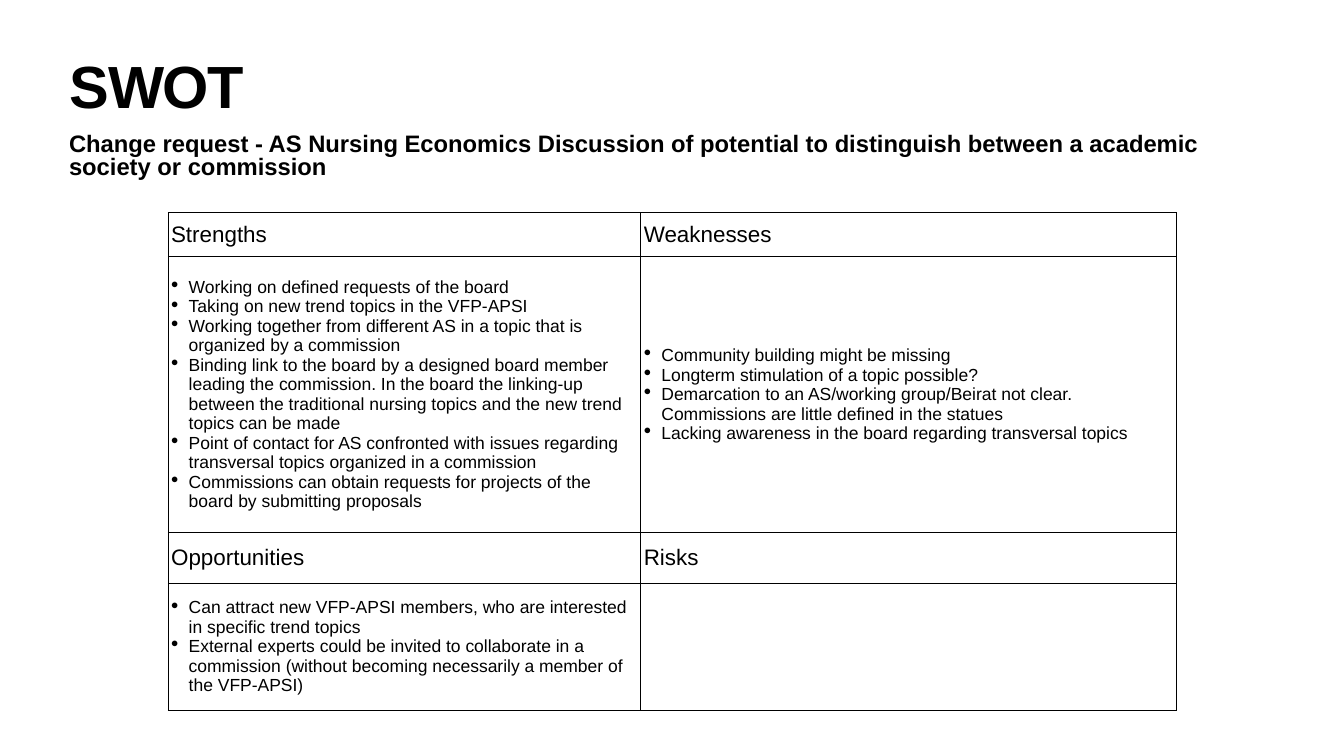
from lxml import etree
from pptx import Presentation
from pptx.dml.color import RGBColor
from pptx.enum.text import MSO_ANCHOR as Anchor
from pptx.oxml import parse_xml
from pptx.oxml.ns import nsdecls, qn
from pptx.util import Inches, Pt

WIDTH, HEIGHT = 26.67, 15
INK = "000000"
COLUMNS = [9.38, 10.62]
ROWS = [0.87, 5.48, 1, 2.53]
HEADING = {"size": Pt(32)}
BODY = {"size": Pt(25)}

# Each quadrant: heading and its points, in reading order
QUADRANTS = [
    ("Strengths", [
        "Working on defined requests of the board",
        "Taking on new trend topics in the VFP-APSI",
        "Working together from different AS in a topic that is organized by a commission",
        "Binding link to the board by a designed board member leading the commission. "
        "In the board the linking-up between the traditional nursing topics and the new "
        "trend topics can be made",
        "Point of contact for AS confronted with issues regarding transversal topics "
        "organized in a commission",
        "Commissions can obtain requests for projects of the board by submitting proposals",
    ]),
    ("Weaknesses", [
        "Community building might be missing",
        "Longterm stimulation of a topic possible?",
        "Demarcation to an AS/working group/Beirat not clear. "
        "Commissions are little defined in the statues",
        "Lacking awareness in the board regarding transversal topics",
    ]),
    ("Opportunities", [
        "Can attract new VFP-APSI members, who are interested in specific trend topics",
        "External experts could be invited to collaborate in a commission "
        "(without becoming necessarily a member of the VFP-APSI)",
    ]),
    ("Risks", []),
]


def color(value):
    return RGBColor.from_string(value)


def set_all(target, values):
    for name, value in values.items():
        setattr(target, name, value)


def margins(inset):
    sides = ("left", "top", "right", "bottom")
    return {f"margin_{side}": Inches(inset) for side in sides}


def style(paragraph, font_format):
    set_all(paragraph.font, {"name": "Arial", **font_format})
    paragraph.font.color.rgb = color(INK)


def add_heading(slide, text, top, height, inset, font_format, anchor=Anchor.TOP):
    box = slide.shapes.add_textbox(
        Inches(1.32), Inches(top), Inches(WIDTH - 2 * 1.32), Inches(height))
    frame = box.text_frame
    set_all(frame, {"word_wrap": True, "vertical_anchor": anchor, **margins(inset)})
    paragraph = frame.paragraphs[0]
    paragraph.text = text
    paragraph.line_spacing = 0.8
    style(paragraph, {"bold": True, **font_format})
    return paragraph


def add_bullet(paragraph):
    properties = paragraph._p.get_or_add_pPr()
    indent = Inches(0.35)
    properties.set("marL", str(indent))
    properties.set("indent", str(-indent))
    etree.SubElement(properties, qn("a:buSzPct"), val="123000")
    etree.SubElement(properties, qn("a:buChar"), char="•")


def add_borders(cell):
    properties = cell._tc.get_or_add_tcPr()
    for position, side in enumerate("LRTB"):
        properties.insert(position, parse_xml(
            f'<a:ln{side} {nsdecls("a")} w="{Pt(1)}"><a:solidFill>'
            f'<a:srgbClr val="{INK}"/></a:solidFill></a:ln{side}>'))


def fill_cell(cell, lines, font_format, bulleted=False):
    set_all(cell, {"vertical_anchor": Anchor.MIDDLE, **margins(0.06)})
    cell.fill.background()
    add_borders(cell)
    frame = cell.text_frame
    for index, line in enumerate(lines):
        paragraph = frame.add_paragraph() if index else frame.paragraphs[0]
        paragraph.text = line
        if bulleted:
            add_bullet(paragraph)
        style(paragraph, font_format)


def add_swot_table(slide):
    left = (WIDTH - sum(COLUMNS)) / 2
    table = slide.shapes.add_table(
        len(ROWS), len(COLUMNS), Inches(left), Inches(4.22),
        Inches(sum(COLUMNS)), Inches(sum(ROWS))).table
    set_all(table, {"first_row": False, "horz_banding": False})
    for column, width in zip(table.columns, COLUMNS):
        column.width = Inches(width)
    for row, height in zip(table.rows, ROWS):
        row.height = Inches(height)
    # Two table rows per quadrant: heading above, points below
    for index, (heading, points) in enumerate(QUADRANTS):
        band, column = divmod(index, 2)
        fill_cell(table.cell(2 * band, column), [heading], HEADING)
        fill_cell(table.cell(2 * band + 1, column), points, BODY, bulleted=True)


def main():
    presentation = Presentation()
    set_all(presentation, {"slide_width": Inches(WIDTH), "slide_height": Inches(HEIGHT)})
    slide = presentation.slides.add_slide(presentation.slide_layouts[6])

    # Title and subtitle
    title = add_heading(slide, "SWOT", 1.18, 1.57, 0.06, {"size": Pt(85)})
    title.runs[0]._r.get_or_add_rPr().set("spc", "-170")
    add_heading(
        slide,
        "Change request - AS Nursing Economics Discussion of potential to "
        "distinguish between a academic society or commission",
        2.6, 1.02, 0.05, {"size": Pt(34)}, Anchor.MIDDLE)

    # Four quadrants
    add_swot_table(slide)
    presentation.save("out.pptx")


if __name__ == "__main__":
    main()
